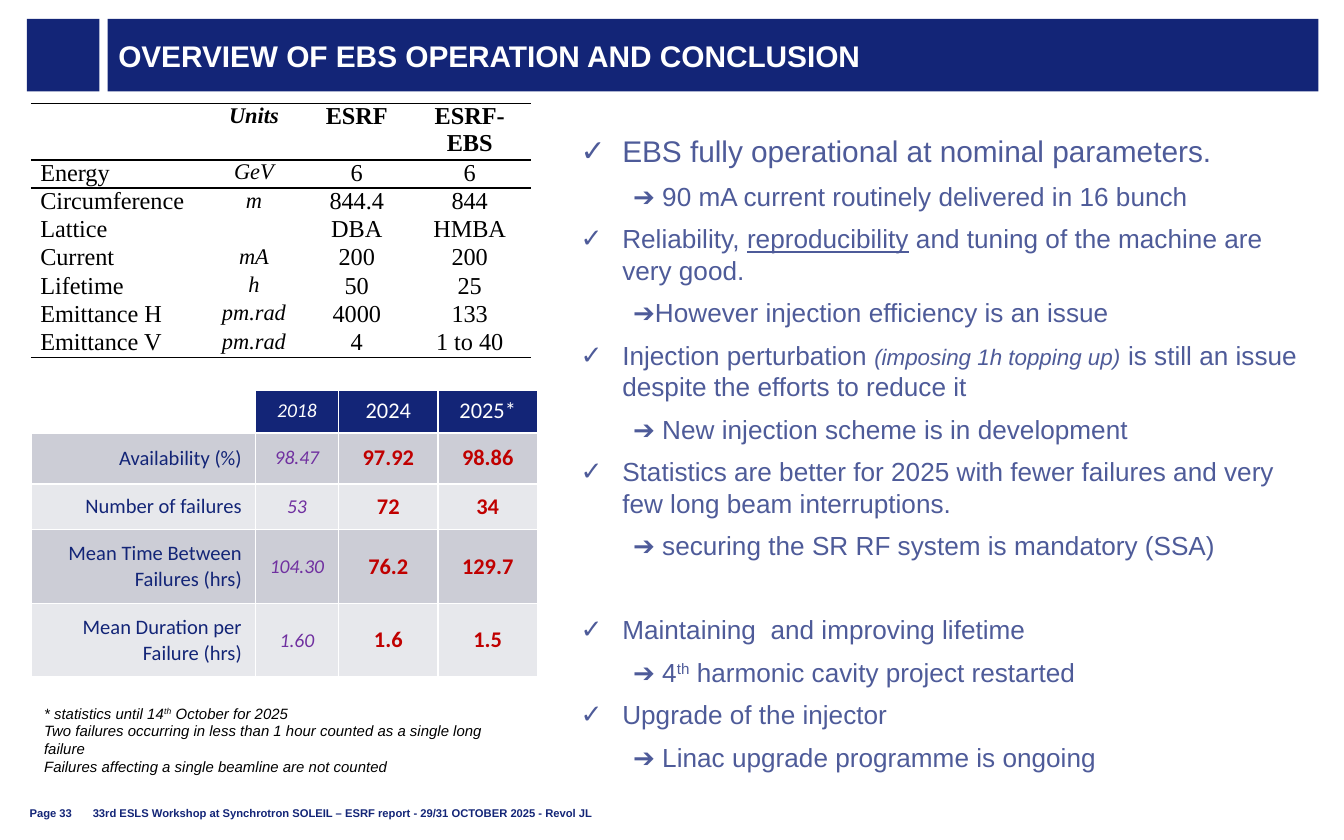
"""Build the closing slide on EBS operation: two tables, a checklist and notes."""
from lxml.etree import SubElement
from pptx import Presentation
from pptx.dml.color import RGBColor
from pptx.enum.shapes import MSO_SHAPE
from pptx.enum.text import MSO_ANCHOR, MSO_AUTO_SIZE, PP_ALIGN
from pptx.oxml.ns import qn
from pptx.util import Pt

PX = 9144
THEME = {
    "navy": "132577", "white": "FFFFFF", "black": "000000", "slate": "4E5B99",
    "violet": "7030A0", "red": "C00000", "dark": "CCCDD6", "light": "E7E8EC",
    "sans": "Arial", "serif": "Times New Roman", "stats": "Calibri",
    "head": 16, "list": 14, "aside": 12, "note": 8, "foot": 6,
    "value": 13, "unit": 12, "label": 11, "past": 10.5, "now": 12,
}
PLAIN = "{2D5ABB26-0587-4C30-8999-92F81FD0307C}"
LEFT, MID, RIGHT = PP_ALIGN.LEFT, PP_ALIGN.CENTER, PP_ALIGN.RIGHT

TITLE = "OVERVIEW OF EBS OPERATION AND CONCLUSION"
POINTS = [
    ([("EBS fully operational at nominal parameters.", {"size": THEME["head"]})],
     ["➔ 90 mA current routinely delivered in 16 bunch"]),
    (["Reliability, ", ("reproducibility", {"under": True}),
      " and tuning of the machine are very good."],
     ["➔However injection efficiency is an issue"]),
    (["Injection perturbation ",
      ("(imposing 1h topping up)", {"size": THEME["aside"], "italic": True}),
      " is still an issue despite the efforts to reduce it"],
     ["➔ New injection scheme is in development"]),
    (["Statistics are better for 2025 with fewer failures and very few long "
      "beam interruptions."],
     ["➔ securing the SR RF system is mandatory (SSA)"]),
    (["Maintaining  and improving lifetime"],
     ["➔ 4", ("th", {"base": 30}), " harmonic cavity project restarted"]),
    (["Upgrade of the injector"], ["➔ Linac upgrade programme is ongoing"]),
]
BREAK = 4
DESIGN = [
    ("", "Units", "ESRF", "ESRF-EBS"),
    ("Energy", "GeV", "6", "6"),
    ("Circumference", "m", "844.4", "844"),
    ("Lattice", "", "DBA", "HMBA"),
    ("Current", "mA", "200", "200"),
    ("Lifetime", "h", "50", "25"),
    ("Emittance H", "pm.rad", "4000", "133"),
    ("Emittance V", "pm.rad", "4", "1 to 40"),
]
STATS = [
    ("", "2018", "2024", "2025*"),
    ("Availability (%)", "98.47", "97.92", "98.86"),
    ("Number of failures", "53", "72", "34"),
    ("Mean Time Between Failures (hrs)", "104.30", "76.2", "129.7"),
    ("Mean Duration per Failure (hrs)", "1.60", "1.6", "1.5"),
]
NOTES = [
    ["* statistics until 14", ("th", {"base": 30}), " October for 2025"],
    ["Two failures occurring in less than 1 hour counted as a single long failure"],
    ["Failures affecting a single beamline are not counted"],
]
FOOT = [
    ("Page 33", (22, 591, 45, 19)),
    ("33rd ESLS Workshop at Synchrotron SOLEIL – ESRF report - "
     "29/31 OCTOBER 2025 - Revol JL", (69, 591, 669, 19)),
]


def scale(*nums):
    return [round(num * PX) for num in nums]


def write(para, runs, size, face, color, bold=False, italic=False, under=False,
          base=0, align=LEFT, before=0, after=0):
    para.alignment = align
    para.space_before, para.space_after = Pt(before), Pt(after)
    basic = dict(size=size, bold=bold, italic=italic, under=under, base=base)
    for part in [runs] if isinstance(runs, str) else runs:
        words, extra = (part, {}) if isinstance(part, str) else part
        look = {**basic, **extra}
        if not words:
            SubElement(para._p, qn("a:endParaRPr"), sz=str(int(size * 100)))
            continue
        run = para.add_run()
        run.text = words
        font = run.font
        font.name, font.size = face, Pt(look["size"])
        font.bold, font.italic = look["bold"], look["italic"]
        font.underline = look["under"]
        font.color.rgb = RGBColor.from_string(color)
        if look["base"]:
            run._r.get_or_add_rPr().set("baseline", str(look["base"] * 1000))


def paint(thing, color):
    thing.fill.solid()
    thing.fill.fore_color.rgb = RGBColor.from_string(color)


def place(shape, box):
    shape.left, shape.top, shape.width, shape.height = scale(*box)


def frame(shape, pad, anchor=MSO_ANCHOR.TOP):
    text = shape.text_frame
    text.word_wrap, text.auto_size = True, MSO_AUTO_SIZE.NONE
    text.vertical_anchor = anchor
    text.margin_left = text.margin_right = pad[0] * PX
    text.margin_top = text.margin_bottom = pad[1] * PX
    return text


def lines(text, count):
    return [text.paragraphs[0]] + [text.add_paragraph() for _ in range(count - 1)]


def mark(para, sign, left, hang):
    props = para._p.get_or_add_pPr()
    props.set("marL", str(left * PX))
    props.set("indent", str(-hang * PX))
    if sign:
        SubElement(props, qn("a:buChar"), char=sign)
    else:
        SubElement(props, qn("a:buNone"))


def edge(cell, sides, color):
    props = cell._tc.get_or_add_tcPr()
    for side in sides:
        line = SubElement(props, qn("a:ln" + side), w=str(Pt(1)))
        fill = SubElement(line, qn("a:solidFill"))
        SubElement(fill, qn("a:srgbClr"), val=color)


def grid(slide, data, spot, cols, rows, pad, anchor, style):
    box = scale(*spot, sum(cols), sum(rows))
    table = slide.shapes.add_table(len(rows), len(cols), *box).table
    table.first_row = table.horz_banding = False
    table._tbl.tblPr.find(qn("a:tableStyleId")).text = PLAIN
    for col, wide in zip(table.columns, cols):
        col.width = wide * PX
    for row, high in zip(table.rows, rows):
        row.height = high * PX
    for r, items in enumerate(data):
        for c, words in enumerate(items):
            cell = table.cell(r, c)
            cell.margin_left = cell.margin_right = pad[0] * PX
            cell.margin_top = cell.margin_bottom = pad[1] * PX
            cell.vertical_anchor = anchor
            sides, ink, fill, look = style(r, c)
            edge(cell, sides, ink)
            if fill:
                paint(cell, fill)
            else:
                cell.fill.background()
            write(cell.text_frame.paragraphs[0], words, **look)


def design(r, c):
    sides = "TB" if r == 0 else "T" if r == 1 else "B" if r == len(DESIGN) - 1 else ""
    look = dict(size=THEME["unit" if c == 1 else "value"], face=THEME["serif"],
                color=THEME["black"], bold=r == 0, italic=c == 1,
                align=MID if c else LEFT)
    return sides, THEME["black"], None, look


def stats(r, c):
    kind, tint = [("label", "navy"), ("past", "violet"), ("now", "red"), ("now", "red")][c]
    band = "dark" if r % 2 else "light"
    if r == 0:
        tint, band = "white", "navy" if c else "white"
    look = dict(size=THEME[kind], face=THEME["stats"], color=THEME[tint],
                bold=r > 0 and c > 1, italic=c == 1, align=MID if c else RIGHT)
    return "LRTB", THEME["white"], THEME[band], look


def main():
    deck = Presentation()
    deck.slide_width, deck.slide_height = scale(1000, 625)
    slide = deck.slides.add_slide(deck.slide_layouts[1])
    title, body = slide.placeholders

    block = slide.shapes.add_shape(MSO_SHAPE.RECTANGLE, *scale(20, 14, 54, 54))
    block.shadow.inherit = False
    block.line.fill.background()
    paint(block, THEME["navy"])

    place(title, (80, 14, 901, 54))
    paint(title, THEME["navy"])
    write(frame(title, (8, 0), MSO_ANCHOR.MIDDLE).paragraphs[0], TITLE,
          size=THEME["head"], face=THEME["sans"], color=THEME["white"], bold=True)

    grid(slide, STATS, (23, 290), (167, 62, 74, 74), (32, 38, 34, 55, 55),
         (10, 5), MSO_ANCHOR.MIDDLE, stats)
    grid(slide, DESIGN, (23, 77), (128, 76, 77, 91), [42] + [21] * 7,
         (7, 0), MSO_ANCHOR.TOP, design)

    place(body, (422, 94, 566, 500))
    paras = iter(lines(frame(body, (10, 5)), 2 * len(POINTS)))
    look = dict(size=THEME["list"], face=THEME["sans"], color=THEME["slate"], after=6)
    for num, (point, result) in enumerate(POINTS):
        para = next(paras)
        mark(para, "✓", 31, 31)
        write(para, point, before=22 if num == BREAK else 0, **look)
        para = next(paras)
        mark(para, None, 39, 0)
        write(para, result, **look)

    text = frame(slide.shapes.add_textbox(*scale(23, 519, 378, 64)), (10, 5))
    for para, note in zip(lines(text, len(NOTES)), NOTES):
        write(para, note, size=THEME["note"], face=THEME["sans"],
              color=THEME["black"], italic=True)

    for words, box in FOOT:
        text = frame(slide.shapes.add_textbox(*scale(*box)), (0, 0), MSO_ANCHOR.BOTTOM)
        write(text.paragraphs[0], words, size=THEME["foot"], face=THEME["sans"],
              color=THEME["navy"], bold=True)
    deck.save("out.pptx")


if __name__ == "__main__":
    main()
